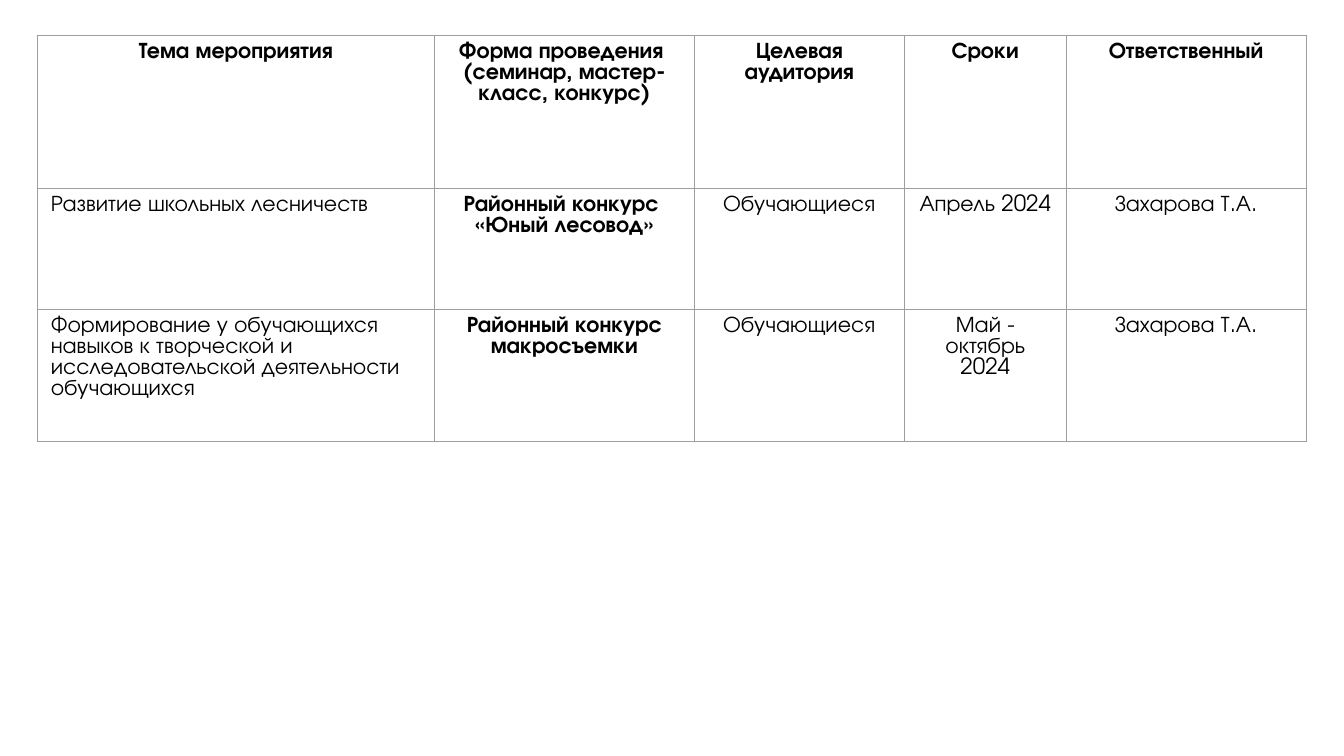
import pptx
import pptx.dml.color
import pptx.enum.text
import pptx.oxml
import pptx.oxml.ns
import pptx.util

Pt = pptx.util.Pt
ALIGN = pptx.enum.text.PP_ALIGN
COLORS = {"text": "000000", "border": "9E9E9E"}
FONT = "TeX Gyre Adventor"


def write_text(tf, text, size=12, bold=False, align=ALIGN.CENTER):
    for i, line in enumerate(text.split("\n")):
        p = tf.paragraphs[0] if i == 0 else tf.add_paragraph()
        p.alignment = align
        r = p.add_run()
        r.text = line
        r.font.name = FONT
        r.font.size = Pt(size)
        r.font.bold = bold
        r.font.color.rgb = pptx.dml.color.RGBColor.from_string(COLORS["text"])


def add_borders(cell, width=0.75):
    tc_pr = cell._tc.get_or_add_tcPr()
    for i, side in enumerate(("lnL", "lnR", "lnT", "lnB")):
        ln = pptx.oxml.parse_xml(
            f'<a:{side} {pptx.oxml.ns.nsdecls("a")} w="{Pt(width)}"><a:solidFill>'
            f'<a:srgbClr val="{COLORS["border"]}"/></a:solidFill></a:{side}>'
        )
        tc_pr.insert(i, ln)


prs = pptx.Presentation()
prs.slide_width, prs.slide_height = Pt(720), Pt(405)
s = prs.slides.add_slide(prs.slide_layouts[6])

# Schedule of events: header row, then one row per event
rows = [
    ["Тема мероприятия", "Форма проведения \n(семинар, мастер-класс, конкурс)",
     "Целевая аудитория", "Сроки", "Ответственный"],
    ["Развитие школьных лесничеств", "Районный конкурс \n«Юный лесовод»",
     "Обучающиеся", "Апрель 2024", "Захарова Т.А."],
    ["Формирование у обучающихся навыков к творческой и исследовательской "
     "деятельности обучающихся", "Районный конкурс макросъемки",
     "Обучающиеся", "Май - октябрь 2024", "Захарова Т.А."],
]
col_widths = [212.75, 139.25, 112.5, 86.75, 128.5]
row_heights = [82, 64.8, 70.8]

# Table frame and grid
table = s.shapes.add_table(
    len(rows), len(col_widths), Pt(20), Pt(19),
    Pt(sum(col_widths)), Pt(sum(row_heights)),
).table
table.first_row = table.horz_banding = False
for col, width in zip(table.columns, col_widths):
    col.width = Pt(width)
for row, height in zip(table.rows, row_heights):
    row.height = Pt(height)

# Cells: bold header and event form, topics aligned left
for i, texts in enumerate(rows):
    for j, text in enumerate(texts):
        cell = table.cell(i, j)
        cell.margin_left = cell.margin_right = Pt(7.2)
        cell.margin_top = cell.margin_bottom = Pt(3.6)
        cell.fill.background()
        add_borders(cell)
        write_text(cell.text_frame, text, bold=i == 0 or j == 1,
                   align=ALIGN.LEFT if i > 0 and j == 0 else ALIGN.CENTER)

prs.save("out.pptx")
